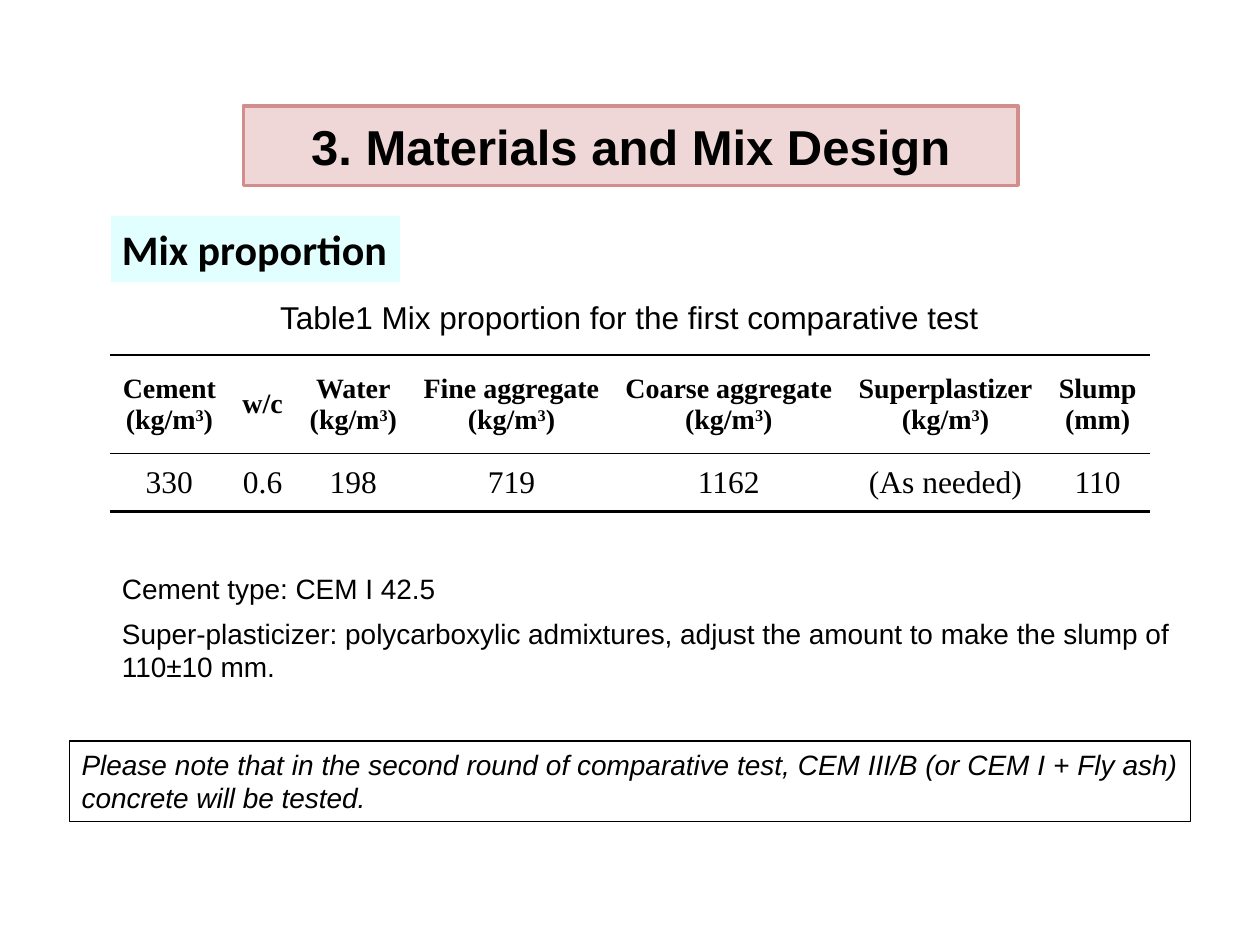
from lxml import etree
from pptx import Presentation
from pptx.dml.color import RGBColor
from pptx.enum import shapes, text
from pptx.oxml import ns
from pptx.util import Pt

COLORS = {
    "text": "000000",
    "rule": "000000",
    "title fill": "E6B9B8",
    "title line": "D28E8C",
    "heading fill": "CCFFFF",
    "heading line": "FFFFFF",
}
ALIGN = text.PP_ALIGN
MIDDLE = text.MSO_ANCHOR.MIDDLE

# Heading lines, value and width in points of each table column
CUBIC = "(kg/m³)"
COLUMNS = [
    (["Cement", CUBIC], "330", 68.4),
    (["w/c"], "0.6", 38.2),
    (["Water", CUBIC], "198", 65.5),
    (["Fine aggregate", CUBIC], "719", 115.2),
    (["Coarse aggregate", CUBIC], "1162", 133.2),
    (["Superplastizer", CUBIC], "(As needed)", 114.5),
    (["Slump", "(mm)"], "110", 59.4),
]
NOTES = [
    "Cement type: CEM I 42.5",
    "Super-plasticizer: polycarboxylic admixtures, adjust the amount "
    "to make the slump of 110±10 mm.",
]
REMARK = ("Please note that in the second round of comparative test, "
          "CEM III/B (or CEM I + Fly ash) concrete will be tested.")


def color(name):
    return RGBColor.from_string(COLORS[name])


def place(shape, box):
    shape.left, shape.top, shape.width, shape.height = map(Pt, box)


def style(paragraph, size, name="Arial", align=ALIGN.LEFT, bold=False,
          italic=False, after=0):
    font = paragraph.font
    font.size, font.name, font.bold, font.italic = Pt(size), name, bold, italic
    font.color.rgb = color("text")
    paragraph.alignment = align
    paragraph.space_before, paragraph.space_after = Pt(0), Pt(after)


def write(frame, lines, size, **options):
    frame.word_wrap = True
    frame.text = "\n".join(lines)
    for paragraph in frame.paragraphs:
        style(paragraph, size, **options)


def outline(shape, name, width):
    shape.line.color.rgb = color(name)
    shape.line.width = Pt(width)


def tint(shape, name):
    """Fill the shape with a colour at 56 % opacity."""
    shape.fill.solid()
    shape.fill.fore_color.rgb = color(name)
    choice = shape.fill._xPr.find(ns.qn("a:solidFill"))[0]
    etree.SubElement(choice, ns.qn("a:alpha"), val="56000")


def add_title(slide, box):
    title = slide.shapes.title
    place(title, box)
    tint(title, "title fill")
    outline(title, "title line", 2)
    write(title.text_frame, ["3. Materials and Mix Design"], 28,
          align=ALIGN.CENTER, bold=True)
    title.text_frame.vertical_anchor = MIDDLE


def add_rectangle(slide, box):
    shape = slide.shapes.add_shape(shapes.MSO_SHAPE.RECTANGLE, *map(Pt, box))
    shape.shadow.inherit = False
    return shape


def add_heading(slide, box):
    heading = add_rectangle(slide, box)
    tint(heading, "heading fill")
    outline(heading, "heading line", 2)
    write(heading.text_frame, ["Mix proportion"], 24, name="Calibri", bold=True)
    heading.text_frame.word_wrap = False
    heading.text_frame.vertical_anchor = MIDDLE


def add_text(slide, box, lines, size, **options):
    shape = slide.shapes.add_textbox(*map(Pt, box))
    write(shape.text_frame, lines, size, **options)


def set_borders(cell, top, bottom):
    properties = cell._tc.get_or_add_tcPr()
    widths = {"a:lnL": 0, "a:lnR": 0, "a:lnT": top, "a:lnB": bottom}
    for index, (tag, width) in enumerate(widths.items()):
        line = etree.Element(ns.qn(tag), w=str(Pt(width)))
        if width:
            fill = etree.SubElement(line, ns.qn("a:solidFill"))
            etree.SubElement(fill, ns.qn("a:srgbClr"), val=COLORS["rule"])
        else:
            etree.SubElement(line, ns.qn("a:noFill"))
        properties.insert(index, line)


def fill_cell(cell, lines, size, bold, top, bottom):
    cell.fill.background()
    cell.vertical_anchor = MIDDLE
    cell.margin_left = cell.margin_right = Pt(5.4)
    cell.margin_top = cell.margin_bottom = 0
    set_borders(cell, top, bottom)
    for index, line in enumerate(lines):
        frame = cell.text_frame
        paragraph = frame.paragraphs[0] if index == 0 else frame.add_paragraph()
        base, raised, rest = line.partition("³")
        paragraph.add_run().text = base
        if raised:
            exponent = paragraph.add_run()
            exponent.text = "3"
            exponent.font._element.set("baseline", "30000")
            paragraph.add_run().text = rest
        style(paragraph, size, name="Times New Roman", align=ALIGN.CENTER,
              bold=bold)


def add_mix_table(slide, box):
    table = slide.shapes.add_table(2, len(COLUMNS), *map(Pt, box)).table
    table.first_row = table.horz_banding = False
    for row, height in zip(table.rows, (56.2, 33.1)):
        row.height = Pt(height)
    for index, (heading, value, width) in enumerate(COLUMNS):
        table.columns[index].width = Pt(width)
        fill_cell(table.cell(0, index), heading, 16, True, 1.5, 1)
        fill_cell(table.cell(1, index), [value], 18, False, 1, 1.5)


def add_remark(slide, box):
    remark = add_rectangle(slide, box)
    remark.fill.background()
    outline(remark, "rule", 0.75)
    write(remark.text_frame, [REMARK], 16, align=ALIGN.JUSTIFY, italic=True,
          after=6)
    remark.text_frame.vertical_anchor = text.MSO_ANCHOR.TOP


def main():
    presentation = Presentation()
    presentation.slide_width, presentation.slide_height = Pt(720), Pt(540)
    slide = presentation.slides.add_slide(presentation.slide_layouts[5])

    # Title and section heading
    add_title(slide, (139, 60.5, 442.8, 45.4))
    add_heading(slide, (62.6, 122.4, 167, 39.6))

    # Caption and table
    add_text(slide, (107.3, 167, 504.7, 28.8),
             ["Table1 Mix proportion for the first comparative test"], 18,
             align=ALIGN.CENTER)
    add_mix_table(slide, (62.6, 203, 594.4, 89.3))

    # Notes below the table
    add_text(slide, (62.6, 323.3, 644.4, 71.3), NOTES, 16, after=6)
    add_remark(slide, (39.6, 423.4, 640.8, 46.1))

    presentation.save("out.pptx")


if __name__ == "__main__":
    main()
